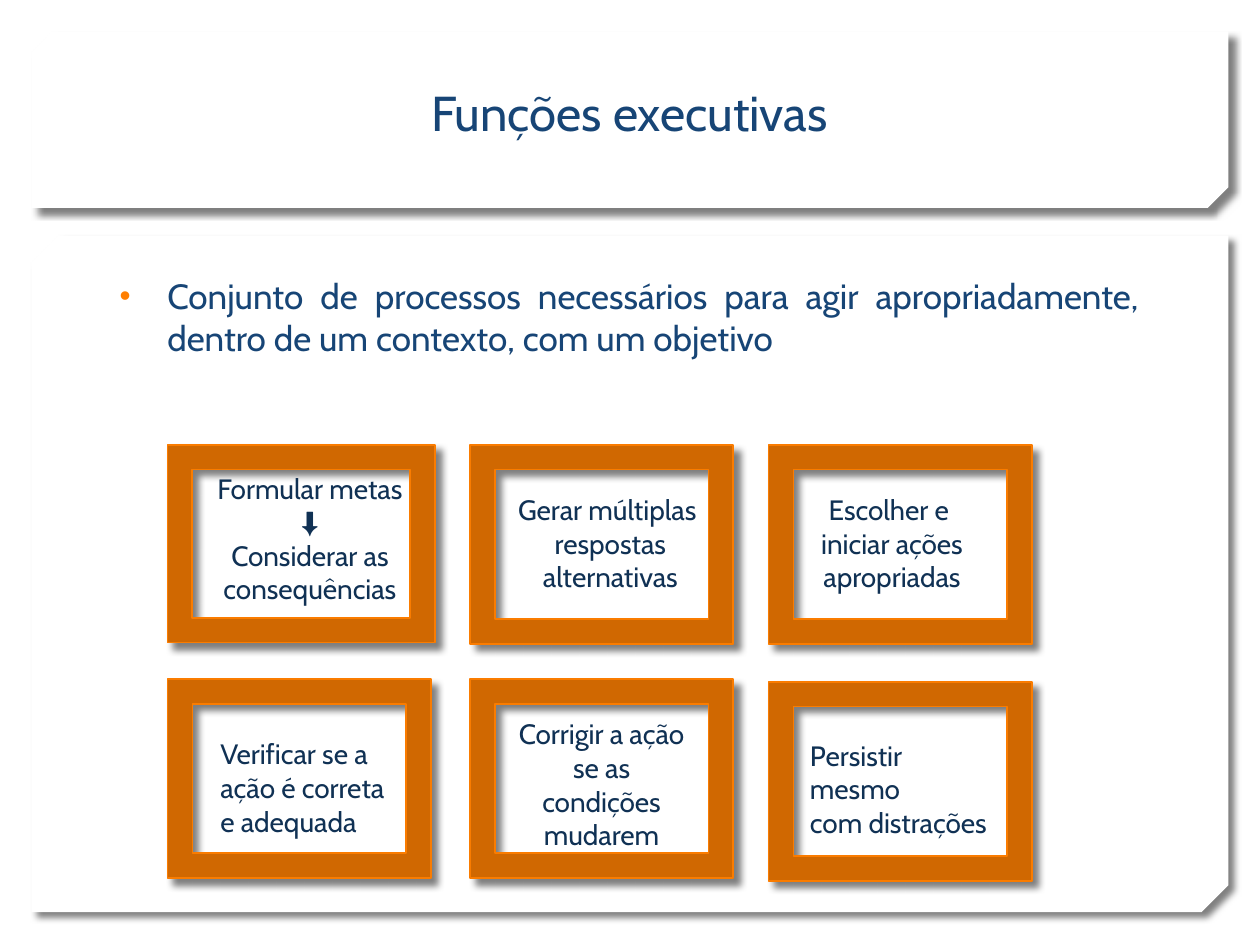
from lxml.etree import SubElement
from pptx import Presentation
from pptx.dml.color import RGBColor
from pptx.enum.shapes import MSO_SHAPE
from pptx.enum.text import MSO_ANCHOR, PP_ALIGN
from pptx.oxml.ns import qn
from pptx.util import Inches, Pt

COLORS = {
    "panel": "FFFFFF",
    "heading": "174576",
    "label": "103154",
    "frame": "D06801",
    "frame_line": "FA7C00",
    "bullet": "FF7F01",
    "shadow": "000000",
}
FONT = "Cabin"
ARROW = "⬇"
CENTER, LEFT = PP_ALIGN.CENTER, PP_ALIGN.LEFT

PANELS = [
    ((0.25, 1.87, 9.5, 5.37), 0.04),
    ((0.25, 0.25, 9.5, 1.4), 0.117),
]

CARDS = [
    ((1.33, 3.53, 2.12, 1.57), (1.47, 3.69, 1.98, 1.78),
     ["Formular metas", ARROW, "Considerar as consequências"], CENTER, True),
    ((3.73, 3.53, 2.09, 1.58), (4.01, 3.86, 1.62, 0.91),
     ["Gerar múltiplas", " respostas", " alternativas"], CENTER, False),
    ((6.1, 3.53, 2.09, 1.58), (6.41, 3.86, 1.34, 0.91),
     ["Escolher e ", "iniciar ações", "apropriadas"], CENTER, False),
    ((1.33, 5.39, 2.09, 1.58), (1.65, 5.8, 1.51, 1.21),
     ["Verificar se a", "ação é correta", "e adequada"], LEFT, False),
    ((3.73, 5.39, 2.09, 1.58), (4.01, 5.64, 1.53, 1.18),
     ["Corrigir a ação se as condições mudarem"], CENTER, True),
    ((6.1, 5.41, 2.09, 1.58), (6.33, 5.81, 1.68, 0.64),
     ["Persistir\vmesmo", "com distrações"], LEFT, False),
]


def color(name):
    return RGBColor.from_string(COLORS[name])


def add_shadow(shape):
    shape.shadow.inherit = False
    effects = shape.element.spPr.find(qn("a:effectLst"))
    shadow = SubElement(effects, qn("a:outerShdw"), blurRad=str(Pt(4)), dist=str(Pt(5)),
                        dir=str(45 * 60000), algn="tl", rotWithShape="0")
    tone = SubElement(shadow, qn("a:srgbClr"), val=COLORS["shadow"])
    SubElement(tone, qn("a:alpha"), val="50000")


def add_filled_shape(page, kind, area, fill, line=None):
    shape = page.shapes.add_shape(kind, *map(Inches, area))
    shape.fill.solid()
    shape.fill.fore_color.rgb = color(fill)
    if line:
        shape.line.color.rgb = color(line)
        shape.line.width = Pt(1)
    else:
        shape.line.fill.background()
    add_shadow(shape)
    return shape


def add_panel(page, area, snip):
    panel = add_filled_shape(page, MSO_SHAPE.SNIP_2_DIAG_RECTANGLE, area, "panel")
    panel.adjustments[0] = 0
    panel.adjustments[1] = snip
    panel.element.spPr.find(qn("a:xfrm")).set("flipV", "1")


def add_text(page, area, lines, size=16, tone="label", align=CENTER,
             anchor=MSO_ANCHOR.TOP, wrap=True):
    box = page.shapes.add_textbox(*map(Inches, area))
    frame = box.text_frame
    frame.word_wrap = wrap
    frame.vertical_anchor = anchor
    for index, line in enumerate(lines):
        para = frame.paragraphs[0] if index == 0 else frame.add_paragraph()
        para.text = line
        para.alignment = align
        for span in para.runs:
            span.font.name = "Arial" if line == ARROW else FONT
            span.font.size = Pt(size)
            span.font.color.rgb = color(tone)
    return box


def add_bullet(para):
    props = para._p.get_or_add_pPr()
    props.set("marL", str(Inches(0.38)))
    props.set("indent", str(-Inches(0.38)))
    tone = SubElement(props, qn("a:buClr"))
    SubElement(tone, qn("a:srgbClr"), val=COLORS["bullet"])
    SubElement(props, qn("a:buSzPct"), val="90000")
    SubElement(props, qn("a:buFont"), typeface="Arial")
    SubElement(props, qn("a:buChar"), char="•")


def add_card(page, area, text_area, lines, align, wrap):
    add_filled_shape(page, MSO_SHAPE.FRAME, area, "frame", "frame_line")
    add_text(page, text_area, lines, align=align, wrap=wrap)


def main():
    deck = Presentation()
    deck.slide_width, deck.slide_height = Inches(10), Inches(7.5)
    page = deck.slides.add_slide(deck.slide_layouts[6])
    for panel in PANELS:
        add_panel(page, *panel)
    add_text(page, (0.85, -0.08, 8.29, 1.25), ["Funções executivas"], size=28,
             tone="heading", anchor=MSO_ANCHOR.BOTTOM)
    body = add_text(page, (0.85, 2.13, 8.29, 4.38),
                    ["Conjunto de processos necessários para agir apropriadamente, "
                     "dentro de um contexto, com um objetivo"],
                    size=20, tone="heading", align=PP_ALIGN.JUSTIFY)
    add_bullet(body.text_frame.paragraphs[0])
    for card in CARDS:
        add_card(page, *card)
    deck.save("out.pptx")


if __name__ == "__main__":
    main()
